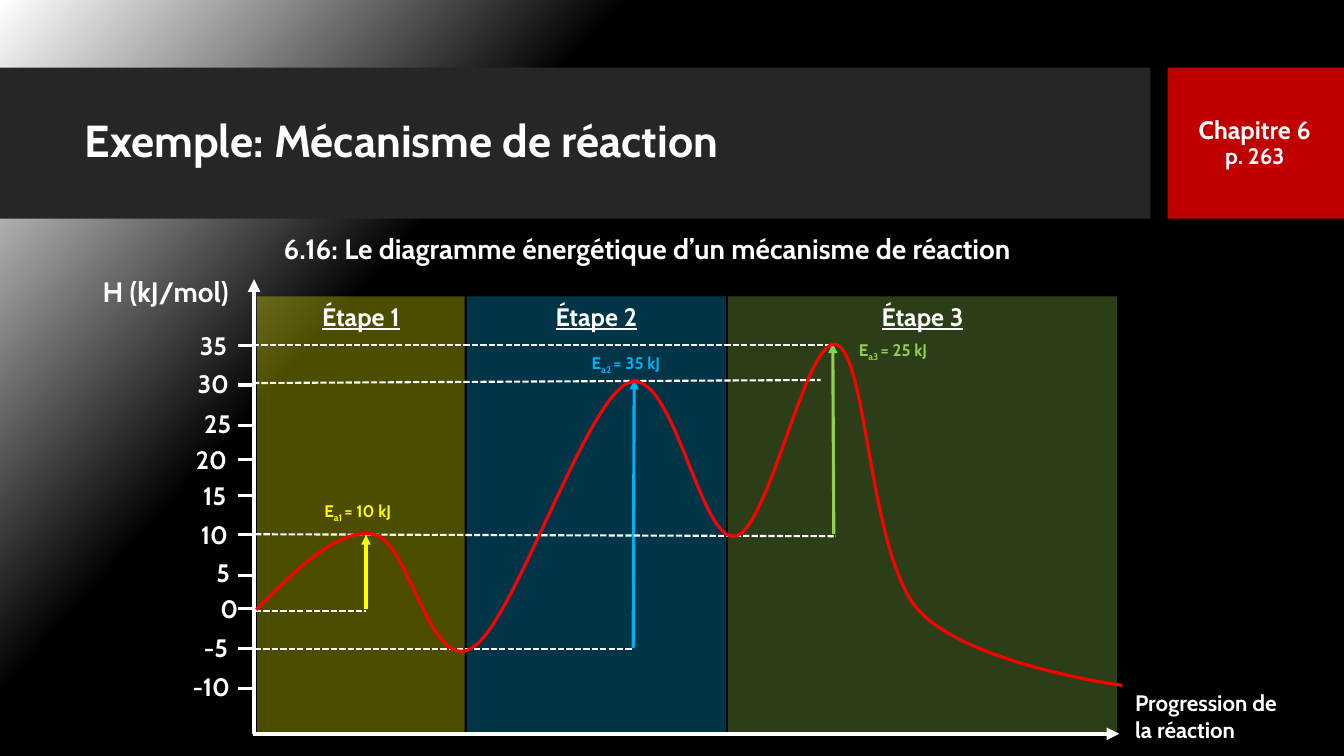
import pptx
import pptx.dml.color
import pptx.enum.dml
import pptx.enum.shapes
import pptx.enum.text
import pptx.oxml.ns
import pptx.util
from lxml import etree

Inches = pptx.util.Inches
RGBColor = pptx.dml.color.RGBColor
ALIGN = pptx.enum.text.PP_ALIGN
ANCHOR = pptx.enum.text.MSO_ANCHOR
SYS_DASH = pptx.enum.dml.MSO_LINE.SQUARE_DOT
qn = pptx.oxml.ns.qn

WHITE = RGBColor(0xFF, 0xFF, 0xFF)
BLACK = RGBColor(0, 0, 0)
CHARCOAL = RGBColor(0x26, 0x26, 0x26)
DARK_RED = RGBColor(0xC0, 0, 0)
RED = RGBColor(0xFF, 0, 0)
YELLOW = RGBColor(0xFF, 0xFF, 0)
BLUE = RGBColor(0, 0xB0, 0xF0)
GREEN = RGBColor(0x92, 0xD0, 0x50)

# Value, height of the tick mark, top and right edge of the label
TICKS = [(35, 1.18, 0.98, -0.15), (30, 1.57, 1.36, -0.13), (25, 1.97, 1.75, -0.11),
         (20, 2.31, 2.11, -0.15), (15, 2.67, 2.47, -0.16), (10, 3.05, 2.85, -0.14),
         (5, 3.46, 3.23, -0.12), (0, 3.79, 3.59, -0.04), (-5, 4.18, 3.97, -0.14),
         (-10, 4.58, 4.36, -0.12)]
STEPS = [("Étape 1", 2.06, YELLOW), ("Étape 2", 2.57, BLUE), ("Étape 3", 3.86, GREEN)]
# Subscript, energy, colour, arrow start and end, label position and width
ACTIVATIONS = [
    ("a1 ", "= 10 kJ", YELLOW, (1.13, 3.79), (1.13, 3.06), (0.62, 2.67), 1.03),
    ("a2 ", "= 35 kJ", BLUE, (3.78, 4.18), (3.79, 1.52), (3.27, 1.2), 1.22),
    ("a3 ", "= 25 kJ", GREEN, (5.77, 3.05), (5.76, 1.16), (5.92, 1.07), 1.04),
]
LEVELS = [((0.03, 4.19), (3.78, 4.19)), ((0.03, 3.81), (1.13, 3.81)),
          ((0.03, 3.05), (5.79, 3.07)), ((0.01, 1.55), (5.64, 1.52)),
          ((0.01, 1.17), (5.8, 1.17))]
CURVE_START = (0.04, 3.8)
# Two control points and the end point of each Bézier segment
CURVE = [
    ((0.45, 3.39), (0.85, 2.99), (1.21, 3.05)),
    ((1.56, 3.12), (1.76, 4.43), (2.18, 4.18)),
    ((2.6, 3.93), (3.3, 1.73), (3.73, 1.55)),
    ((4.17, 1.36), (4.44, 3.13), (4.79, 3.07)),
    ((5.13, 3.01), (5.5, 1.05), (5.8, 1.17)),
    ((6.1, 1.29), (6.12, 3.21), (6.59, 3.78)),
    ((7.06, 4.34), (8.63, 4.55), (8.63, 4.55)),
]


def write(sp, *paragraphs, size=18, color=WHITE, align=ALIGN.LEFT, anchor=ANCHOR.TOP,
          spacing=None, underline=None):
    """Fill a shape; a paragraph is a list of (text, size, baseline) or a plain string."""
    tf = sp.text_frame
    tf.word_wrap = True
    tf.vertical_anchor = anchor
    for i, runs in enumerate(paragraphs):
        p = tf.paragraphs[0] if i == 0 else tf.add_paragraph()
        p.alignment = align
        p.space_before = pptx.util.Pt(0)
        if spacing:
            p.line_spacing = spacing
        for text, run_size, baseline in [(runs, size, 0)] if isinstance(runs, str) else runs:
            r = p.add_run()
            r.text = text
            r.font.name = "Cabin"
            r.font.size = pptx.util.Pt(run_size)
            r.font.bold = True
            r.font.underline = underline
            r.font.color.rgb = color
            if baseline:
                r.font._element.set("baseline", str(baseline * 1000))


def add_text(slide, x, y, w, h, *paragraphs, **style):
    sp = slide.shapes.add_textbox(Inches(x), Inches(y), Inches(w), Inches(h))
    write(sp, *paragraphs, **style)


def add_rect(slide, x, y, w, h, color, opacity=None):
    sp = slide.shapes.add_shape(pptx.enum.shapes.MSO_SHAPE.RECTANGLE,
                                Inches(x), Inches(y), Inches(w), Inches(h))
    sp.shadow.inherit = False
    sp.fill.solid()
    sp.fill.fore_color.rgb = color
    sp.line.fill.background()
    if opacity:
        clr = sp._element.spPr.find(qn("a:solidFill"))[0]
        etree.SubElement(clr, qn("a:alpha")).set("val", str(opacity * 1000))
    return sp


def add_line(slide, x, y, start, end, color=WHITE, width=2.25, dash=None, arrow=False):
    """Draw a line whose ends are measured from the corner x, y."""
    sp = slide.shapes.add_connector(
        pptx.enum.shapes.MSO_CONNECTOR.STRAIGHT,
        Inches(x + start[0]), Inches(y + start[1]), Inches(x + end[0]), Inches(y + end[1]))
    sp.line.color.rgb = color
    sp.line.width = pptx.util.Pt(width)
    if dash:
        sp.line.dash_style = dash
    if arrow:
        etree.SubElement(sp.line._ln, qn("a:tailEnd")).set("type", "triangle")
    etree.SubElement(sp._element.spPr, qn("a:effectLst"))


def set_background(slide):
    fill = slide.background.fill
    fill.gradient()
    fill.gradient_angle = 360 - 42
    for stop, position, color in zip(fill.gradient_stops, (0, 0.31), (WHITE, BLACK)):
        stop.position = position
        stop.color.rgb = color


def add_header(slide, x, y, w, h):
    badge_w = 1.75
    badge_x = x + w - badge_w
    add_rect(slide, x, y, badge_x - 0.17 - x, h, CHARCOAL)
    add_rect(slide, badge_x, y, badge_w, h, DARK_RED)
    title = slide.shapes.title
    title.left, title.top = Inches(x + 0.74), Inches(y + 0.16)
    title.width, title.height = Inches(10.51), Inches(1.18)
    write(title, "Exemple: Mécanisme de réaction", size=32, anchor=ANCHOR.MIDDLE, spacing=0.9)
    slide.shapes._spTree.append(title._element)
    add_text(slide, badge_x - 0.02, y, badge_w + 0.02, h + 0.01,
             "Chapitre 6", [("p. 263", 16, 0)],
             align=ALIGN.CENTER, anchor=ANCHOR.MIDDLE, spacing=0.9)


def add_steps(slide, x, y, h):
    for name, w, color in STEPS:
        sp = add_rect(slide, x, y, w, h, color, opacity=30)
        write(sp, name, align=ALIGN.CENTER, underline=True)
        x += w + 0.02


def add_axes(slide, x, y):
    add_line(slide, x, y, (0.02, 5.03), (0.02, 0.52), width=3, arrow=True)
    add_line(slide, x, y, (0.01, 5.03), (8.6, 5.03), width=3, arrow=True)
    add_text(slide, x - 1.58, y + 0.42, 1.61, 0.44, "H (kJ/mol)", size=20)
    add_text(slide, x + 8.66, y + 4.54, 1.71, 0.64, "Progression de la réaction", size=16)
    for value, tick_y, label_y, right in TICKS:
        add_text(slide, x + right - 0.6, y + label_y, 0.6, 0.4, str(value), align=ALIGN.RIGHT)
        add_line(slide, x, y, (0.02, tick_y), (-0.14, tick_y))


def add_energy_curve(slide, x, y):
    """Join the segment ends with a freeform, then bend each side into a Bézier curve."""
    def place(point):
        return Inches(x + point[0]), Inches(y + point[1])

    builder = slide.shapes.build_freeform(*place(CURVE_START))
    builder.add_line_segments([place(segment[-1]) for segment in CURVE], close=False)
    sp = builder.convert_to_shape()
    sides = list(sp._element.iter(qn("a:lnTo")))
    for side, segment in zip(sides, CURVE):
        bend = etree.Element(qn("a:cubicBezTo"))
        for px, py in map(place, segment):
            pt = etree.SubElement(bend, qn("a:pt"))
            pt.set("x", str(px - sp.left))
            pt.set("y", str(py - sp.top))
        side.getparent().replace(side, bend)
    sp.shadow.inherit = False
    sp.fill.background()
    sp.line.color.rgb = RED
    sp.line.width = pptx.util.Pt(2.25)


def add_diagram(slide, x, y):
    add_steps(slide, x + 0.05, y + 0.69, 4.34)
    add_axes(slide, x, y)
    add_text(slide, x - 0.37, y, 8.58, 0.44,
             "6.16: Le diagramme énergétique d’un mécanisme de réaction",
             size=20, align=ALIGN.CENTER)
    for subscript, energy, color, start, end, (label_x, label_y), w in ACTIVATIONS:
        add_line(slide, x, y, start, end, color=color, arrow=True)
        add_text(slide, x + label_x, y + label_y, w, 0.3,
                 [("E", 12, 0), (subscript, 12, -25), (energy, 12, 0)], color=color)
    for start, end in LEVELS:
        add_line(slide, x, y, start, end, width=1.5, dash=SYS_DASH)
    add_energy_curve(slide, x, y)


def main():
    prs = pptx.Presentation()
    prs.slide_width, prs.slide_height = Inches(13.33), Inches(7.5)
    slide = prs.slides.add_slide(prs.slide_layouts[5])
    set_background(slide)
    add_header(slide, 0, 0.67, 13.33, 1.5)
    add_diagram(slide, 2.5, 2.25)
    prs.save("out.pptx")


if __name__ == "__main__":
    main()
